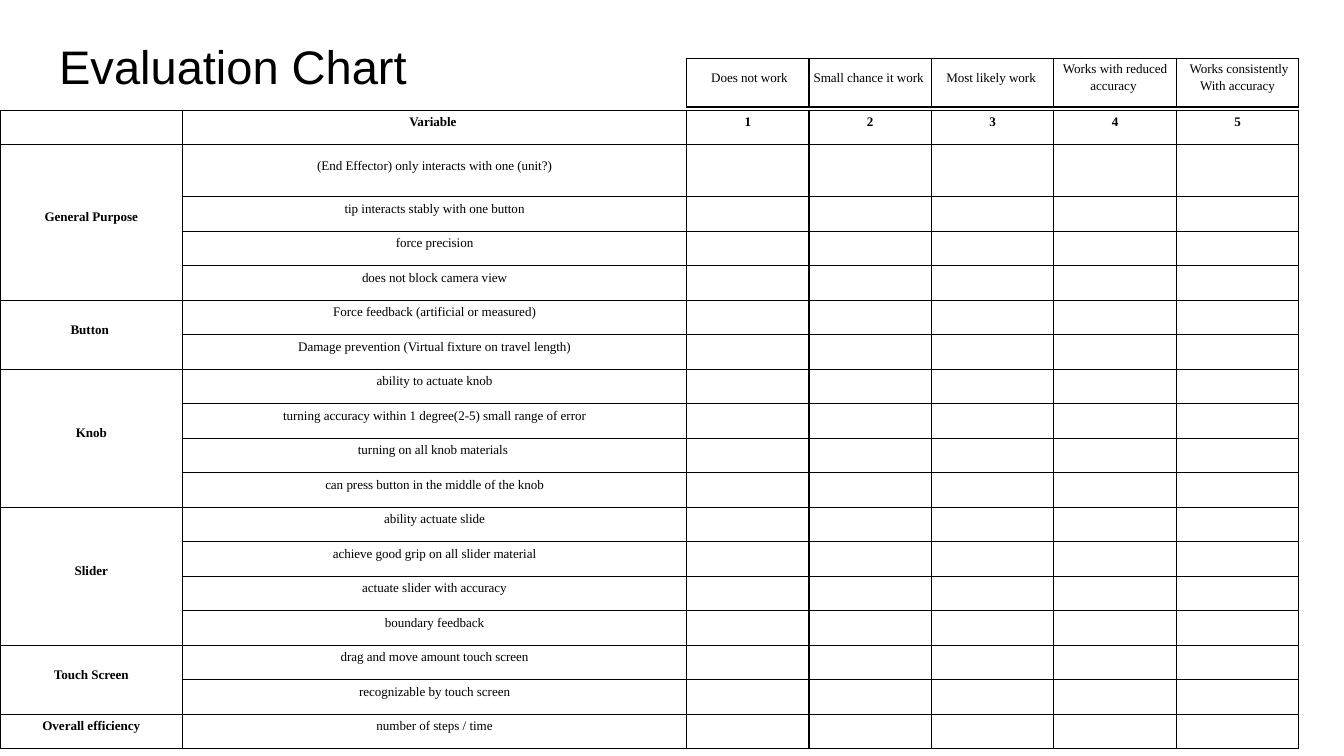
import pptx
import pptx.util
import pptx.dml.color
import pptx.enum.text
import pptx.oxml.ns
from lxml import etree

Pt = pptx.util.Pt
ALIGN = pptx.enum.text.PP_ALIGN
ANCHOR = pptx.enum.text.MSO_ANCHOR

TITLE = "Evaluation Chart"
SCALE = [
    " Does not work",
    "Small chance it work ",
    "Most likely work ",
    "Works with reduced accuracy ",
    " Works consistently\nWith accuracy",
]
GROUPS = [
    ("General Purpose", [
        "(End Effector) only interacts with one (unit?)",
        "tip interacts stably with one button",
        "force precision",
        "does not block camera view",
    ]),
    ("Button ", [
        "Force feedback (artificial or measured)",
        "Damage prevention (Virtual fixture on travel length)",
    ]),
    ("Knob", [
        "ability to actuate knob",
        "turning accuracy within 1 degree(2-5) small range of error",
        "turning on all knob materials ",
        "can press button in the middle of the knob",
    ]),
    ("Slider", [
        "ability actuate slide",
        "achieve good grip on all slider material",
        "actuate slider with accuracy",
        "boundary feedback",
    ]),
    ("Touch Screen", [
        "drag and move amount touch screen",
        "recognizable by touch screen",
    ]),
    ("Overall efficiency", ["number of steps / time"]),
]
COLORS = {"ink": "000000"}
SERIF = "Times New Roman"
SIZE = 7
GROUP_W, ITEM_W, MARK_W = 97.8, 270, 65.6
ROW_H, TALL_H, SCALE_H = 18.5, 28, 25.9
GRID_TOP, SCALE_TOP = 59, 31.4


def style(font, name, size, bold=False):
    font.name = name
    font.size = Pt(size)
    font.bold = bold
    font.color.rgb = pptx.dml.color.RGBColor.from_string(COLORS["ink"])


def border(cell):
    props = cell._tc.get_or_add_tcPr()
    qn = pptx.oxml.ns.qn
    for side in ("lnL", "lnR", "lnT", "lnB"):
        line = etree.SubElement(props, qn("a:" + side), w=str(Pt(0.75)))
        fill = etree.SubElement(line, qn("a:solidFill"))
        etree.SubElement(fill, qn("a:srgbClr"), val=COLORS["ink"])


def write(cell, text, bold=False):
    cell.text_frame.text = text
    for para in cell.text_frame.paragraphs:
        para.alignment = ALIGN.CENTER
        para.line_spacing = 1.15
        for run in para.runs:
            style(run.font, SERIF, SIZE, bold)


def add_grid(slide, left, top, widths, heights):
    frame = slide.shapes.add_table(
        len(heights), len(widths), Pt(left), Pt(top), Pt(sum(widths)), Pt(sum(heights)))
    table = frame.table
    table.first_row = table.horz_banding = False
    for col, width in zip(table.columns, widths):
        col.width = Pt(width)
    for row, height in zip(table.rows, heights):
        row.height = Pt(height)
    for cell in table.iter_cells():
        cell.margin_left = cell.margin_right = cell.margin_top = Pt(0.72)
        cell.margin_bottom = Pt(7.2)
        cell.vertical_anchor = ANCHOR.MIDDLE
        border(cell)
        cell.fill.background()
        para = cell.text_frame.paragraphs[0]._p
        etree.SubElement(para, pptx.oxml.ns.qn("a:endParaRPr"), sz=str(SIZE * 100))
    return table


def add_title(slide):
    title = slide.shapes.title
    title.left, title.top, title.width, title.height = map(Pt, (24.5, 10.8, 671, 45.4))
    frame = title.text_frame
    frame.text = TITLE
    frame.word_wrap = True
    frame.auto_size = pptx.enum.text.MSO_AUTO_SIZE.NONE
    frame.vertical_anchor = ANCHOR.BOTTOM
    frame.margin_left = frame.margin_right = frame.margin_top = Pt(7.2)
    frame.margin_bottom = Pt(6)
    frame.paragraphs[0].alignment = ALIGN.LEFT
    style(frame.paragraphs[0].runs[0].font, "Arial", 25.2)


def add_chart(slide):
    count = sum(len(items) for _, items in GROUPS)
    marks = [MARK_W] * len(SCALE)
    heights = [ROW_H, TALL_H] + [ROW_H] * (count - 1)
    table = add_grid(slide, 0, GRID_TOP, [GROUP_W, ITEM_W] + marks, heights)
    heads = ["Variable "] + [str(n + 1) for n in range(len(SCALE))]
    for col, head in enumerate(heads, 1):
        write(table.cell(0, col), head, True)
    row = 1
    for name, items in GROUPS:
        if len(items) > 1:
            table.cell(row, 0).merge(table.cell(row + len(items) - 1, 0))
        write(table.cell(row, 0), name, True)
        for item in items:
            write(table.cell(row, 1), item)
            row += 1
    scale = add_grid(slide, GROUP_W + ITEM_W, SCALE_TOP, marks, [SCALE_H])
    for col, label in enumerate(SCALE):
        write(scale.cell(0, col), label)


def main():
    deck = pptx.Presentation()
    deck.slide_width, deck.slide_height = Pt(720), Pt(405)
    slide = deck.slides.add_slide(deck.slide_layouts[5])
    add_title(slide)
    add_chart(slide)
    deck.save("out.pptx")


if __name__ == "__main__":
    main()
